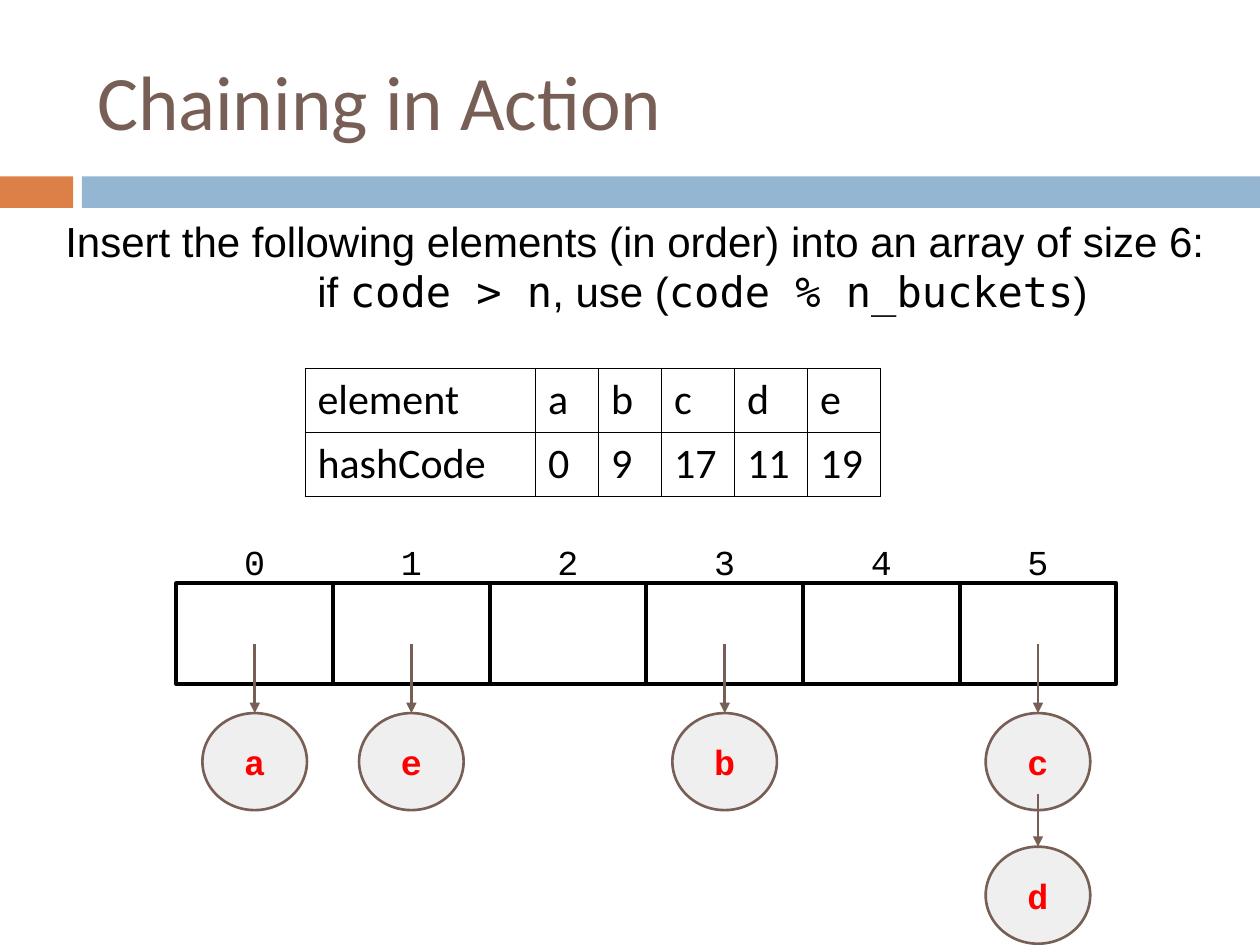
import pptx
import pptx.util
import pptx.dml.color
import pptx.enum.shapes
import pptx.enum.text
import pptx.oxml.ns
import lxml.etree

Inches, Pt = pptx.util.Inches, pptx.util.Pt
RGBColor = pptx.dml.color.RGBColor
SHAPE = pptx.enum.shapes.MSO_SHAPE
ALIGN = pptx.enum.text.PP_ALIGN
MIDDLE = pptx.enum.text.MSO_ANCHOR.MIDDLE
qn = pptx.oxml.ns.qn

BLACK = RGBColor(0x00, 0x00, 0x00)
BROWN = RGBColor(0x77, 0x5F, 0x55)
ORANGE = RGBColor(0xDD, 0x80, 0x47)
BLUE = RGBColor(0x94, 0xB6, 0xD2)
GREY = RGBColor(0xEF, 0xEF, 0xEF)
RED = RGBColor(0xFF, 0x00, 0x00)

TITLE = {"name": "Calibri", "size": Pt(44), "color": BROWN}
CELL = {"name": "Calibri", "size": Pt(24), "color": BLACK}
BODY = {"name": "Arial", "size": Pt(24), "color": BLACK}
CODE = {**BODY, "name": "DejaVu Sans Mono"}
INDEX = {"name": "Courier New", "size": Pt(20), "color": BLACK}
NODE = {**INDEX, "color": RED, "bold": True}
PADDED = {"vertical_anchor": MIDDLE, "word_wrap": True,
          **{f"margin_{side}": Inches(0.1) for side in ("left", "top", "right", "bottom")}}


def set_all(obj, values):
    """Set every attribute named in a dict."""
    for name, value in values.items():
        setattr(obj, name, value)


def add_run(p, text, fmt):
    """Append a run with the given font format."""
    r = p.add_run()
    r.text = text
    set_all(r.font, {k: v for k, v in fmt.items() if k != "color"})
    r.font.color.rgb = fmt["color"]


def add_label(sp, text, fmt):
    """Centre a short label inside a shape."""
    set_all(sp.text_frame, PADDED)
    p = sp.text_frame.paragraphs[0]
    p.alignment = ALIGN.CENTER
    add_run(p, text, fmt)


def add_box(shapes, kind, box, fill=None, line=None, width=1.5):
    """Add a flat preset shape with optional fill and outline."""
    sp = shapes.add_shape(kind, *map(Inches, box))
    sp.shadow.inherit = False
    for part, color in ((sp.fill, fill), (sp.line.fill, line)):
        if color is None:
            part.background()
        else:
            part.solid()
            part.fore_color.rgb = color
    if line is not None:
        sp.line.width = Pt(width)
    return sp


def add_header(s, left, top, width, height):
    """Fill the title placeholder and draw the two bars under it."""
    title = s.shapes.title
    set_all(title, {"left": Inches(left), "top": Inches(top),
                    "width": Inches(width), "height": Inches(height)})
    title.text_frame.vertical_anchor = MIDDLE
    p = title.text_frame.paragraphs[0]
    p.alignment = ALIGN.LEFT
    add_run(p, "Chaining in Action", TITLE)
    add_box(s.shapes, SHAPE.RECTANGLE, (0, 1.4, 0.58, 0.25), ORANGE)
    add_box(s.shapes, SHAPE.RECTANGLE, (0.65, 1.4, 9.35, 0.25), BLUE)


def add_task(s, left, top, width, height):
    """Write the task, with its rule indented on the second line."""
    tf = s.shapes.add_textbox(*map(Inches, (left, top, width, height))).text_frame
    tf.word_wrap = True
    add_run(tf.paragraphs[0],
            "Insert the following elements (in order) into an array of size 6:", BODY)
    p = tf.add_paragraph()
    p._p.get_or_add_pPr().set("marL", str(Inches(2)))
    for text, fmt in (("if ", BODY), ("code > n", CODE), (", use (", BODY),
                      ("code % n_buckets", CODE), (")", BODY)):
        add_run(p, text, fmt)


def add_borders(cell):
    """Give a cell thin black borders on all sides."""
    tcPr = cell._tc.get_or_add_tcPr()
    for i, side in enumerate(("lnL", "lnR", "lnT", "lnB")):
        ln = lxml.etree.Element(qn(f"a:{side}"), w=str(Pt(0.4)))
        fill = lxml.etree.SubElement(ln, qn("a:solidFill"))
        lxml.etree.SubElement(fill, qn("a:srgbClr"), val=str(BLACK))
        tcPr.insert(i, ln)


def add_codes(s, left, top, width, height):
    """Add the table of elements and their hash codes."""
    rows = (("element", *"abcde"), ("hashCode", "0", "9", "17", "11", "19"))
    widths = (1.83, 0.5, 0.5, 0.58, 0.58, 0.58)
    table = s.shapes.add_table(len(rows), len(widths),
                               *map(Inches, (left, top, width, height))).table
    set_all(table, {"first_row": False, "horz_banding": False})
    for column, w in zip(table.columns, widths):
        column.width = Inches(w)
    for i, row in enumerate(rows):
        for j, text in enumerate(row):
            cell = table.cell(i, j)
            cell.vertical_anchor = MIDDLE
            cell.fill.background()
            add_run(cell.text_frame.paragraphs[0], text, CELL)
            add_borders(cell)


def add_node(s, text, center, top, start):
    """Add a chain node and the arrow that points to its top."""
    shapes = s.shapes.add_group_shape().shapes
    sp = add_box(shapes, SHAPE.OVAL, (center - 0.415, top, 0.83, 0.77), GREY, BROWN)
    add_label(sp, text, NODE)
    arrow = shapes.add_connector(pptx.enum.shapes.MSO_CONNECTOR.STRAIGHT,
                                 *map(Inches, (center, start, center, top)))
    arrow.end_connect(sp, 0)
    arrow.line.color.rgb = BROWN
    arrow.line.width = Pt(1.5)
    lxml.etree.SubElement(arrow.line._get_or_add_ln(), qn("a:tailEnd"), type="triangle")
    lxml.etree.SubElement(arrow._element.spPr, qn("a:effectLst"))


def add_buckets(s, left, top, width, height):
    """Draw the array with its indices and the chain under each bucket."""
    chains = ("a", "e", "", "b", "", "cd")
    step = width / len(chains)
    shapes = s.shapes.add_group_shape().shapes
    for i in range(len(chains)):
        x = left + i * step
        add_box(shapes, SHAPE.RECTANGLE, (x, top, step, height), None, BLACK, 2.25)
        index = shapes.add_textbox(*map(Inches, (x, top - 0.3, step, 0.25)))
        add_label(index, str(i), INDEX)
    for i, chain in enumerate(chains):
        for depth, text in enumerate(chain):
            node_top = top + 1.03 + depth * 1.06
            gap = 0.42 if depth else 0.55
            add_node(s, text, left + (i + 0.5) * step, node_top, node_top - gap)


def main():
    """Build the slide and save it."""
    prs = pptx.Presentation()
    set_all(prs, {"slide_width": Inches(10), "slide_height": Inches(7.5)})
    s = prs.slides.add_slide(prs.slide_layouts[5])
    add_header(s, 0.67, 0.25, 8.92, 1.08)
    add_codes(s, 2.42, 2.92, 4.57, 1.02)
    add_task(s, 0.42, 1.66, 9.34, 0.91)
    add_buckets(s, 1.4, 4.63, 7.46, 0.8)
    prs.save("out.pptx")


if __name__ == "__main__":
    main()
